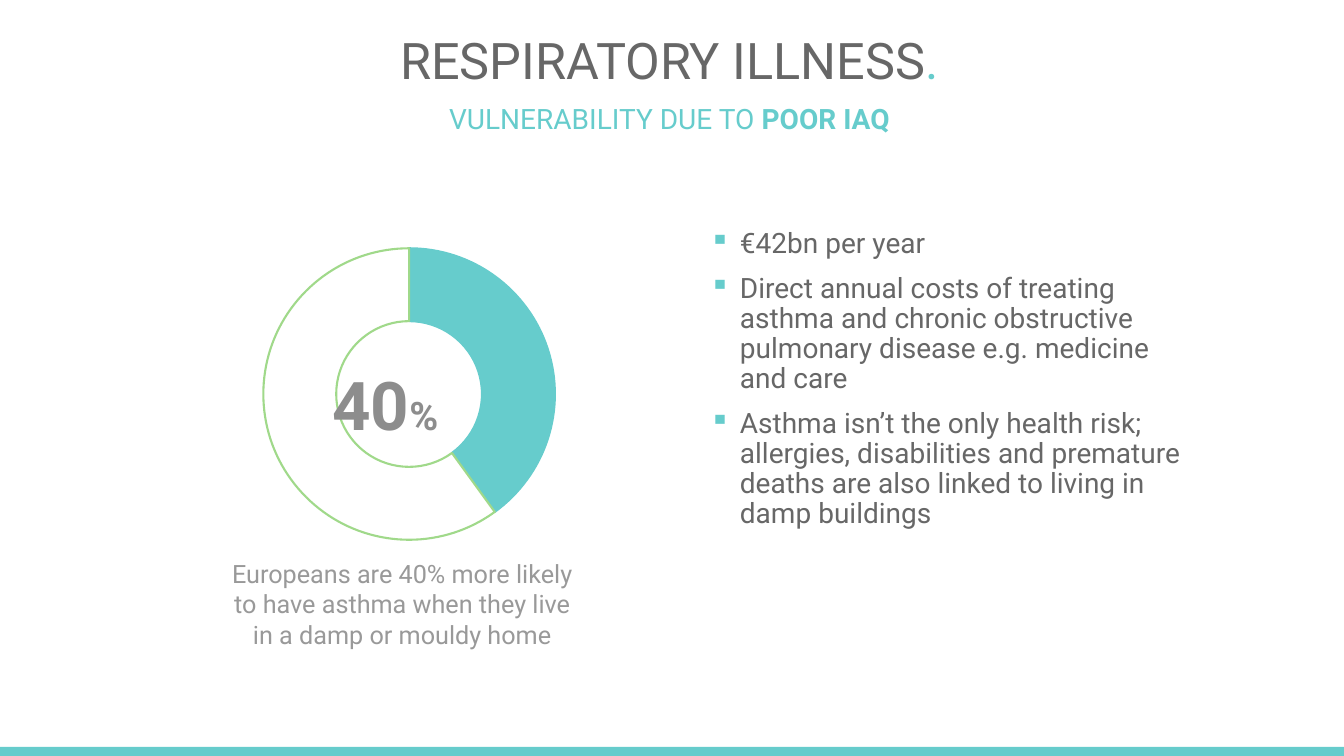
"""Build the respiratory illness slide with its doughnut chart."""
from dataclasses import dataclass

from lxml import etree
from pptx import Presentation
from pptx import util as u
from pptx.chart import data as chart_data
from pptx.dml.color import RGBColor
from pptx.enum import chart as chart_enum, shapes, text
from pptx.oxml import ns

TEAL = RGBColor(0x66, 0xCC, 0xCC)
DARK_GREY = RGBColor(0x67, 0x67, 0x67)
MID_GREY = RGBColor(0x8D, 0x8D, 0x8D)
LIGHT_GREY = RGBColor(0x99, 0x99, 0x99)
GREEN = RGBColor(0xA0, 0xD9, 0x8A)
WHITE = RGBColor(0xFF, 0xFF, 0xFF)
FONT_NAME = "Roboto"
INDENT = u.Inches(0.3)


@dataclass
class Run:
    words: str
    size: float
    color: RGBColor
    bold: bool = False


@dataclass
class TextBlock:
    box: tuple[float, float, float, float]
    paragraphs: list[list[Run]]
    inset: tuple[float, float] = (0.1, 0.05)
    anchor: text.MSO_ANCHOR = text.MSO_ANCHOR.TOP
    alignment: text.PP_ALIGN = text.PP_ALIGN.CENTER
    line_spacing: float = 0.9
    bullet: str = ""


BULLETS = [
    "€42bn per year",
    "Direct annual costs of treating asthma and chronic obstructive pulmonary "
    "disease e.g. medicine and care",
    "Asthma isn’t the only health risk; allergies, disabilities and premature "
    "deaths are also linked to living in damp buildings",
]
CAPTION = "Europeans are 40% more likely to have asthma when they live in a damp or mouldy home"

BLOCKS = [
    TextBlock((0.31, 0.35, 12.66, 0.55),
              [[Run("RESPIRATORY ILLNESS", 36, DARK_GREY), Run(".", 36, TEAL)]],
              inset=(0.1, 0), anchor=text.MSO_ANCHOR.MIDDLE),
    TextBlock((0.31, 1, 12.66, 0.4),
              [[Run("VULNERABILITY DUE TO ", 20, TEAL), Run("POOR IAQ", 20, TEAL, True)]]),
    TextBlock((3.07, 3.6, 1.5, 0.8),
              [[Run("40", 48, MID_GREY, True), Run("%", 28, MID_GREY, True)]],
              inset=(0, 0), line_spacing=1),
    TextBlock((2.26, 5.54, 3.46, 1.2), [[Run(CAPTION, 18, LIGHT_GREY)]],
              inset=(0, 0), line_spacing=1),
    TextBlock((6.94, 2.23, 5.01, 4.13),
              [[Run(words, 20, DARK_GREY)] for words in BULLETS],
              alignment=text.PP_ALIGN.LEFT, bullet="▪"),
]


def set_values(target: object, values: dict) -> None:
    for name, value in values.items():
        setattr(target, name, value)


def add_bullet(paragraph, character: str) -> None:
    properties = paragraph._p.get_or_add_pPr()
    properties.set("marL", str(INDENT))
    properties.set("indent", str(-INDENT))
    color = etree.SubElement(properties, ns.qn("a:buClr"))
    etree.SubElement(color, ns.qn("a:srgbClr"), val=str(TEAL))
    etree.SubElement(properties, ns.qn("a:buChar"), char=character)


def add_text(slide, block: TextBlock) -> None:
    frame = slide.shapes.add_textbox(*map(u.Inches, block.box)).text_frame
    across, down = map(u.Inches, block.inset)
    set_values(frame, {
        "word_wrap": True, "vertical_anchor": block.anchor,
        "margin_left": across, "margin_right": across,
        "margin_top": down, "margin_bottom": down,
    })
    for index, runs in enumerate(block.paragraphs):
        paragraph = frame.add_paragraph() if index else frame.paragraphs[0]
        if block.bullet:
            add_bullet(paragraph, block.bullet)
        set_values(paragraph, {
            "alignment": block.alignment, "line_spacing": block.line_spacing,
            "space_before": u.Pt(10 if index else 0),
        })
        for item in runs:
            run = paragraph.add_run()
            run.text = item.words
            set_values(run.font, {"name": FONT_NAME, "size": u.Pt(item.size), "bold": item.bold})
            run.font.color.rgb = item.color


def add_doughnut(slide) -> None:
    data = chart_data.CategoryChartData()
    data.categories = ["1", "2"]
    data.add_series("Series 1", (40, 60))
    chart = slide.shapes.add_chart(
        chart_enum.XL_CHART_TYPE.DOUGHNUT, *map(u.Inches, (1.9, 2.23, 4.45, 4.54)), data).chart
    set_values(chart, {"has_legend": False, "has_title": False})
    set_values(chart.font, {"name": FONT_NAME, "size": u.Pt(10)})
    chart.font.color.rgb = DARK_GREY
    plot = chart.plots[0]
    set_values(plot, {"vary_by_categories": False, "has_data_labels": False})
    for index, (fill, line) in enumerate([(TEAL, TEAL), (WHITE, GREEN)]):
        style = plot.series[0].points[index].format
        style.fill.solid()
        style.fill.fore_color.rgb = fill
        style.line.color.rgb = line
        style.line.width = u.Pt(1.5)
    area = chart._chartSpace.find(".//" + ns.qn("c:plotArea"))
    layout = area.find(ns.qn("c:layout"))
    if layout is None:
        layout = etree.Element(ns.qn("c:layout"))
        area.insert(0, layout)
    manual = etree.SubElement(layout, ns.qn("c:manualLayout"))
    settings = {"layoutTarget": "inner", "xMode": "edge", "yMode": "edge",
                "x": "0.16", "y": "0.03", "w": "0.65", "h": "0.68"}
    for name, value in settings.items():
        etree.SubElement(manual, ns.qn("c:" + name), val=value)


def add_footer_bar(slide) -> None:
    shape = slide.shapes.add_shape(
        shapes.MSO_SHAPE.RECTANGLE, *map(u.Inches, (0, 7.41, 13.33, 0.09)))
    shape.shadow.inherit = False
    shape.fill.solid()
    shape.fill.fore_color.rgb = TEAL
    shape.line.fill.background()


def main() -> None:
    presentation = Presentation()
    set_values(presentation, {"slide_width": u.Inches(13.33), "slide_height": u.Inches(7.5)})
    slide = presentation.slides.add_slide(presentation.slide_layouts[6])
    add_footer_bar(slide)
    add_doughnut(slide)
    for block in BLOCKS:
        add_text(slide, block)
    presentation.save("out.pptx")


if __name__ == "__main__":
    main()
